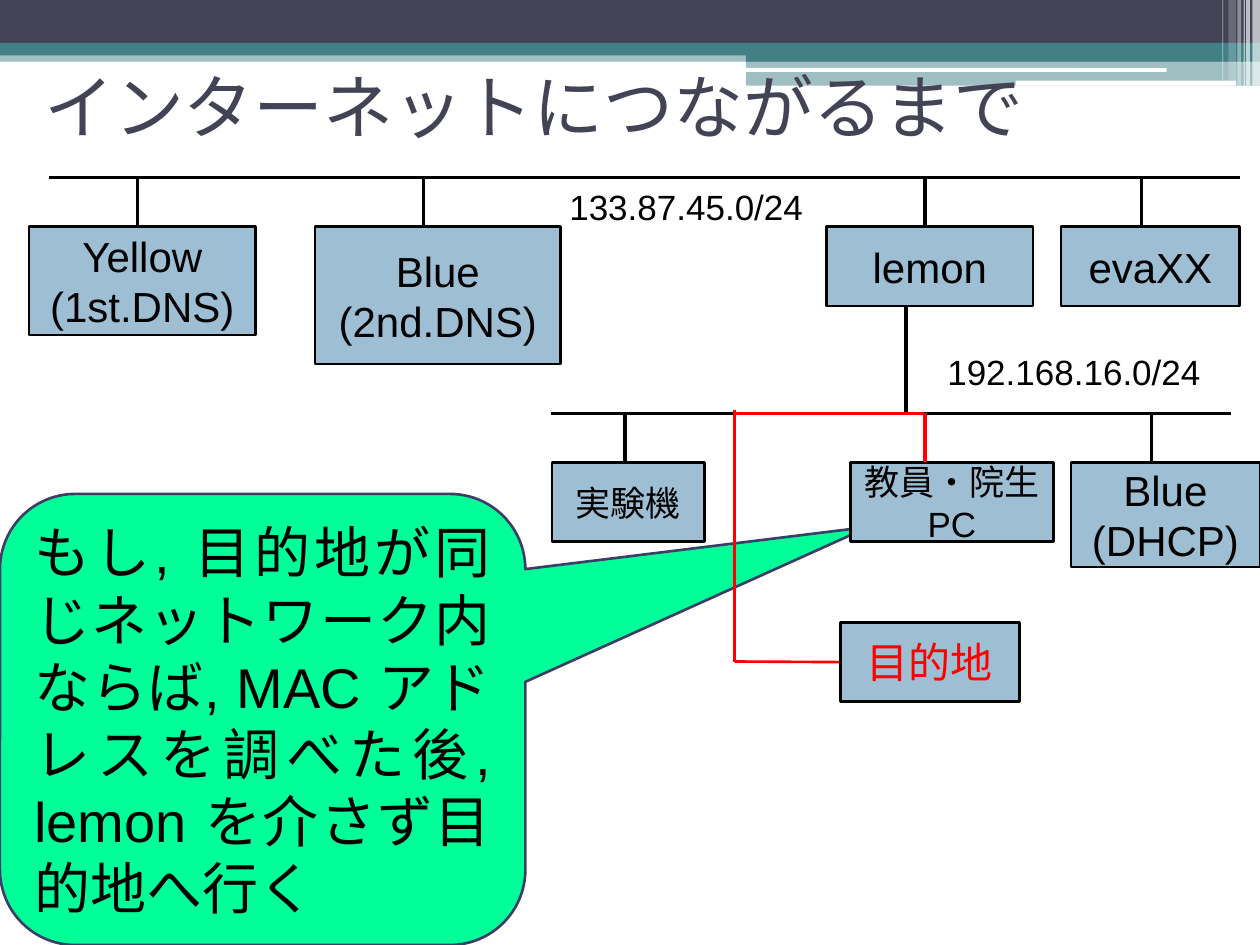
from dataclasses import dataclass

from lxml import etree
from pptx import Presentation
from pptx import util as u
from pptx.dml.color import RGBColor
from pptx.enum import shapes, text
from pptx.oxml import ns

PX = 9144
RECT = shapes.MSO_SHAPE.RECTANGLE
ROUND = shapes.MSO_SHAPE.ROUNDED_RECTANGLE
CALL = shapes.MSO_SHAPE.ROUNDED_RECTANGULAR_CALLOUT
LEFT, MID, JUST = (text.PP_ALIGN.LEFT, text.PP_ALIGN.CENTER,
                   text.PP_ALIGN.JUSTIFY)


@dataclass(frozen=True)
class Theme:
    dark: str = "424456"
    teal: str = "438086"
    white: str = "FFFFFF"
    ink: str = "000000"
    node: str = "9DBED3"
    route: str = "FF0000"
    note: str = "00FF99"
    edge: str = "3D3E66"
    latin: str = "Arial"
    asian: str = "Noto Sans CJK JP"
    head: int = 40
    big: int = 32
    name: int = 24
    small: int = 20
    wire: float = 2
    thin: float = 1.5


class Page:
    def __init__(self, deck, theme):
        self.theme = theme
        self.slide = deck.slides.add_slide(deck.slide_layouts[5])
        self.items = self.slide.shapes

    def words(self, shape, lines, size, color=None, align=LEFT, font=None,
              anchor=text.MSO_ANCHOR.MIDDLE):
        frame = shape.text_frame
        frame.word_wrap = True
        frame.vertical_anchor = anchor
        for i, line in enumerate(lines):
            para = frame.add_paragraph() if i else frame.paragraphs[0]
            para.alignment = align
            run = para.add_run()
            run.text = line
            run.font.size = u.Pt(size)
            run.font.name = font or self.theme.latin
            run.font.color.rgb = RGBColor.from_string(color or self.theme.ink)
            asian = etree.SubElement(run.font._element, ns.qn("a:ea"))
            asian.set("typeface", self.theme.asian)

    def shape(self, kind, box, fill, line=None, alpha=100):
        item = self.items.add_shape(kind, *(n * PX for n in box))
        item.shadow.inherit = False
        item.fill.solid()
        item.fill.fore_color.rgb = RGBColor.from_string(fill)
        if alpha < 100:
            tone = item.element.spPr.find(".//" + ns.qn("a:srgbClr"))
            etree.SubElement(tone, ns.qn("a:alpha")).set("val", str(alpha * 1000))
        if line:
            item.line.color.rgb = RGBColor.from_string(line)
            item.line.width = u.Pt(self.theme.thin)
        else:
            item.line.fill.background()
        return item

    def node(self, box, lines, size=None, color=None):
        item = self.shape(RECT, box, self.theme.node, self.theme.ink)
        self.words(item, lines, size or self.theme.name, color, MID)
        return item

    def wire(self, x1, y1, x2, y2, color=None, width=None):
        item = self.items.add_connector(
            shapes.MSO_CONNECTOR.STRAIGHT, *(n * PX for n in (x1, y1, x2, y2)))
        item.line.color.rgb = RGBColor.from_string(color or self.theme.ink)
        item.line.width = u.Pt(width or self.theme.wire)
        etree.SubElement(item.element.spPr, ns.qn("a:effectLst"))
        return item

    def label(self, box, line):
        item = self.items.add_textbox(*(n * PX for n in box))
        self.words(item, [line], self.theme.small, anchor=text.MSO_ANCHOR.TOP)
        item.text_frame.auto_size = text.MSO_AUTO_SIZE.SHAPE_TO_FIT_TEXT

    def title(self, box, line):
        item = self.items.title
        item.left, item.top, item.width, item.height = (n * PX for n in box)
        self.words(item, [line], self.theme.head, self.theme.dark,
                   font=self.theme.asian)
        item.text_frame.auto_size = text.MSO_AUTO_SIZE.NONE
        self.items.element.append(item.element)

    def note(self, box, line, tip):
        item = self.shape(CALL, box, self.theme.note, self.theme.edge)
        for i, value in enumerate(tip):
            item.adjustments[i] = value
        self.words(item, [line], self.theme.big, align=JUST)


def main():
    deck = Presentation()
    deck.slide_width, deck.slide_height = 1000 * PX, 750 * PX
    theme = Theme()
    page = Page(deck, theme)

    for kind, box, fill, alpha in (
        (RECT, (0, 40, 1000, 9), theme.teal, 50),
        (RECT, (0, 0, 1000, 34), theme.dark, 100),
        (RECT, (0, 34, 1000, 10), theme.teal, 100),
        (RECT, (592, 39, 408, 10), theme.teal, 100),
        (RECT, (592, 48, 408, 20), theme.teal, 50),
        (ROUND, (591, 54, 335, 3), theme.white, 100),
        (ROUND, (806, 64, 175, 4), theme.white, 100),
    ):
        page.shape(kind, box, fill, alpha=alpha)
    for left, width, high, alpha in (
        (994, 6, 68, 65), (989, 3, 68, 65), (987, 1, 68, 60),
        (982, 3, 68, 40), (975, 6, 64, 20), (970, 1, 64, 30),
    ):
        page.shape(RECT, (left, 0, width, high), theme.white, alpha=alpha)

    outer, inner, drop = 141, 328, 39
    page.wire(984, outer, 39, outer)
    for box, lines, x in (
        ((23, 180, 180, 86), ["Yellow", "(1st.DNS)"], 109),
        ((250, 180, 195, 109), ["Blue", "(2nd.DNS)"], 336),
        ((656, 180, 164, 63), ["lemon"], 734),
        ((842, 180, 142, 63), ["evaXX"], 906),
    ):
        page.node(box, lines)
        page.wire(x, outer, x, outer + drop)
    page.wire(719, 242, 719, inner)

    page.note((0, 392, 417, 358),
              "もし, 目的地が同じネットワーク内ならば, MAC アドレスを調べた後, "
              "lemon を介さず目的地へ行く", (1.154, -0.427, 0.167))
    page.label((742, 273, 227, 44), "192.168.16.0/24")

    page.wire(977, inner, 437, inner)
    for box, line, size, x, color in (
        ((438, 367, 121, 63), "実験機", theme.small, 496, theme.ink),
        ((675, 367, 161, 63), "教員・院生 PC", theme.small, 734, theme.route),
        ((850, 367, 150, 83), "Blue (DHCP)", theme.name, 914, theme.ink),
    ):
        page.node(box, [line], size)
        page.wire(x, inner, x, inner + drop, color)

    page.title((25, 25, 900, 117), "インターネットにつながるまで")
    page.label((442, 142, 227, 44), "133.87.45.0/24")

    turn, goal = 583, 525
    page.wire(733, inner, turn, inner, theme.route, theme.thin)
    page.wire(turn, 325, turn, goal, theme.route, theme.thin)
    last = page.wire(667, goal, turn, goal, theme.route, theme.thin)
    dest = page.node((667, 494, 142, 63), ["目的地"], color=theme.route)
    last.begin_connect(dest, 1)

    deck.save("out.pptx")


if __name__ == "__main__":
    main()
